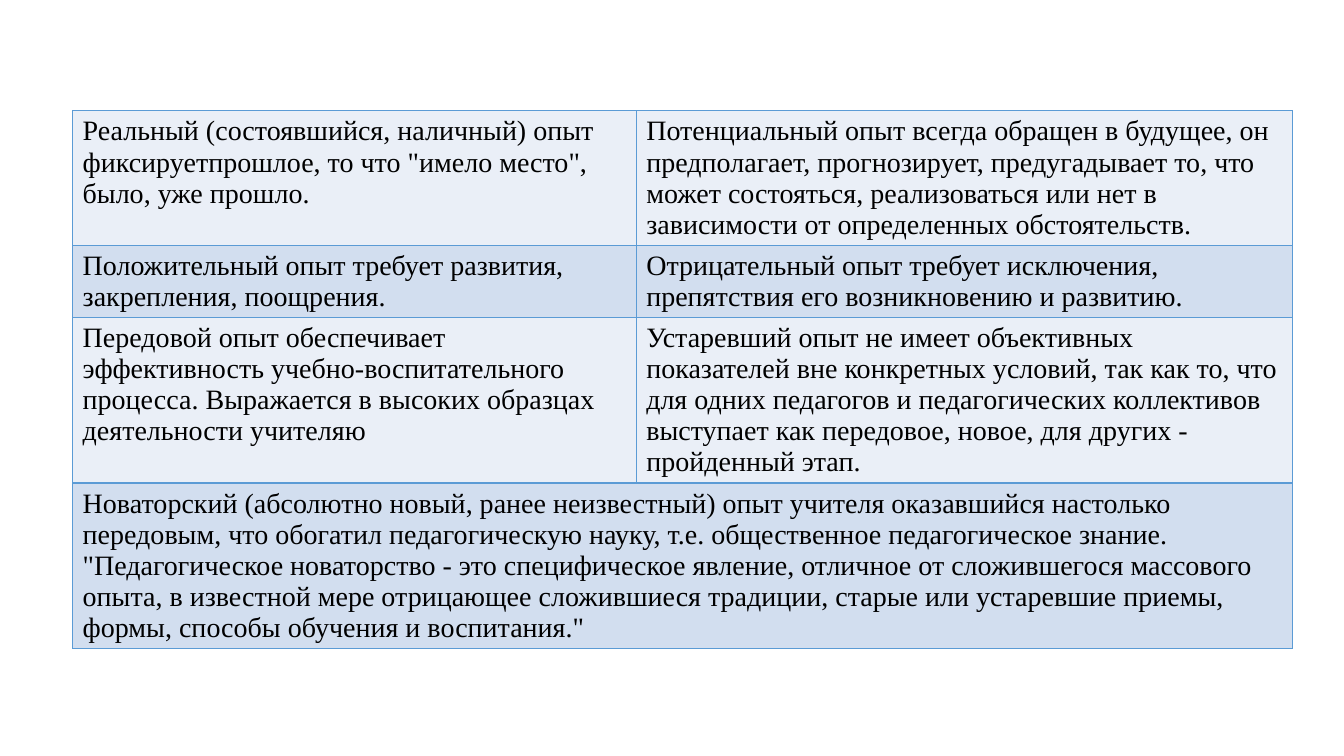
from lxml.etree import SubElement
from pptx import Presentation
from pptx.dml.color import RGBColor as Rgb
from pptx.oxml.ns import qn
from pptx.util import Inches, Pt

HUES = {"line": "5B9BD5", "light": "EAEFF7", "dark": "D2DEEF", "text": "000000"}
FONT = "Times New Roman"
WIDTHS = (5.59, 6.51)
HEIGHTS = (1.33, 0.71, 1.64, 1.64)
ROWS = (
    ("Реальный (состоявшийся, наличный) опыт фиксируетпрошлое, то что "
     "\"имело место\", было, уже прошло.",
     "Потенциальный опыт всегда обращен в будущее, он предполагает, "
     "прогнозирует, предугадывает то, что может состояться, реализоваться "
     "или нет в зависимости от определенных обстоятельств."),
    ("Положительный опыт требует развития, закрепления, поощрения.",
     "Отрицательный опыт требует исключения, препятствия его возникновению "
     "и развитию."),
    ("Передовой опыт обеспечивает эффективность учебно-воспитательного "
     "процесса. Выражается в высоких образцах деятельности учителяю",
     "Устаревший опыт не имеет объективных показателей вне конкретных "
     "условий, так как то, что для одних педагогов и педагогических "
     "коллективов выступает как передовое, новое, для других - пройденный "
     "этап."),
    ("Новаторский (абсолютно новый, ранее неизвестный) опыт учителя "
     "оказавшийся настолько передовым, что обогатил педагогическую науку, "
     "т.е. общественное педагогическое знание. \"Педагогическое новаторство "
     "- это специфическое явление, отличное от сложившегося массового опыта, "
     "в известной мере отрицающее сложившиеся традиции, старые или "
     "устаревшие приемы, формы, способы обучения и воспитания.\"",),
)


def frame(cell):
    """Draw a thin line on all four sides of a cell."""
    props = cell._tc.get_or_add_tcPr()
    for side in ("lnL", "lnR", "lnT", "lnB"):
        line = SubElement(props, qn(f"a:{side}"), w=str(Pt(1)))
        fill = SubElement(line, qn("a:solidFill"))
        SubElement(fill, qn("a:srgbClr"), val=HUES["line"])


def paint(cell, hue):
    """Give a cell its border and fill."""
    frame(cell)
    cell.fill.solid()
    cell.fill.fore_color.rgb = Rgb.from_string(HUES[hue])


def write(cell, text):
    """Put formatted text in a cell."""
    cell.text_frame.text = text
    font = cell.text_frame.paragraphs[0].runs[0].font
    font.name, font.size, font.bold = FONT, Pt(20), False
    font.color.rgb = Rgb.from_string(HUES["text"])


def add_grid(slide):
    """Add the table comparing kinds of experience."""
    grid = slide.shapes.add_table(
        len(ROWS), len(WIDTHS), Inches(0.72), Inches(1.1),
        Inches(sum(WIDTHS)), Inches(sum(HEIGHTS))).table
    grid.first_row = False
    for col, width in zip(grid.columns, WIDTHS):
        col.width = Inches(width)
    for i, (row, height, texts) in enumerate(zip(grid.rows, HEIGHTS, ROWS)):
        row.height = Inches(height)
        for cell in row.cells:
            paint(cell, "dark" if i % 2 else "light")
        if len(texts) == 1:
            grid.cell(i, 0).merge(grid.cell(i, len(WIDTHS) - 1))
        for cell, text in zip(row.cells, texts):
            write(cell, text)


def main():
    """Build and save the slide."""
    deck = Presentation()
    deck.slide_width, deck.slide_height = Inches(13.33), Inches(7.5)
    add_grid(deck.slides.add_slide(deck.slide_layouts[6]))
    deck.save("out.pptx")


if __name__ == "__main__":
    main()
